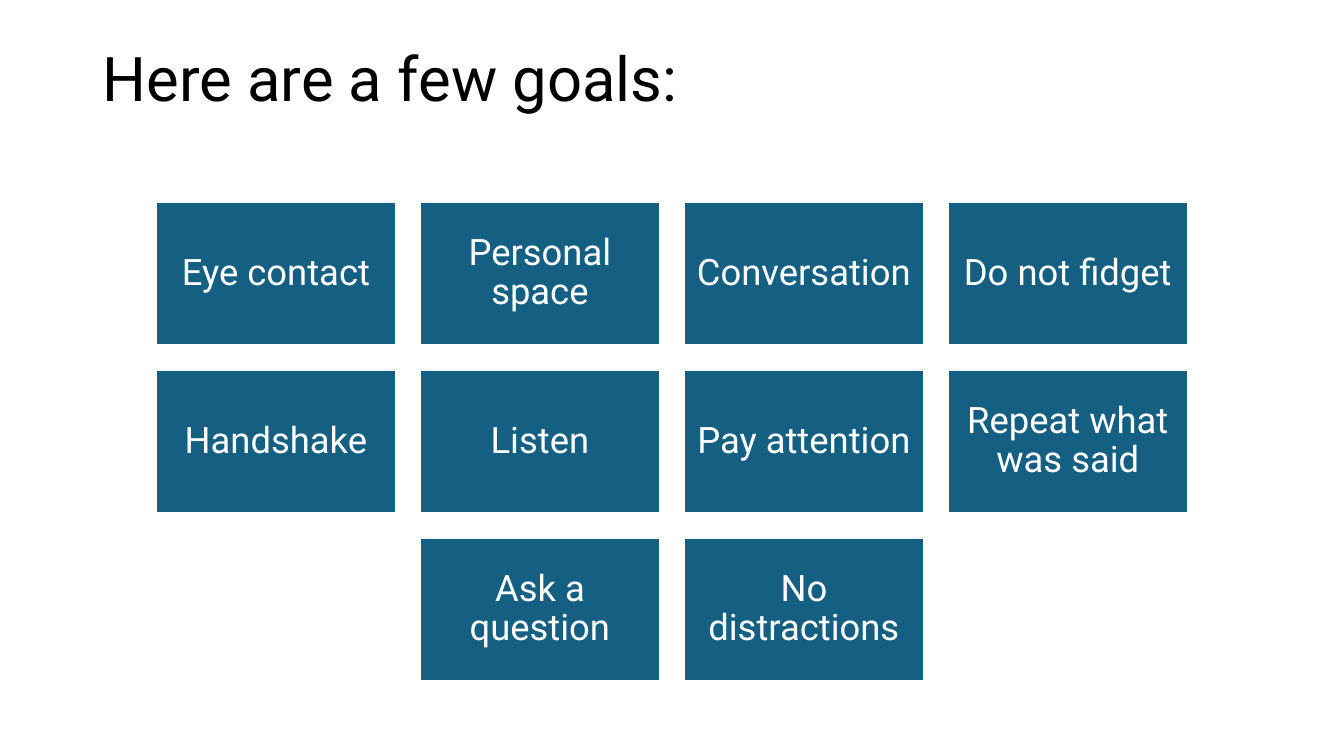
from dataclasses import dataclass

from pptx import Presentation
from pptx.dml.color import RGBColor
from pptx.enum.shapes import MSO_SHAPE
from pptx.enum.text import MSO_ANCHOR, PP_ALIGN
from pptx.util import Pt


@dataclass(frozen=True)
class Theme:
    font: str = "Roboto"
    title_size: int = 44
    goal_size: int = 26
    black: RGBColor = RGBColor(0x00, 0x00, 0x00)
    white: RGBColor = RGBColor(0xFF, 0xFF, 0xFF)
    teal: RGBColor = RGBColor(0x15, 0x60, 0x82)


theme = Theme()
SLIDE_W, SLIDE_H = 960, 540


def style_text(tf, size, color, align):
    tf.word_wrap = True
    for p in tf.paragraphs:
        p.alignment = align
        p.line_spacing = 0.9
        for r in p.runs:
            r.font.name = theme.font
            r.font.size = Pt(size)
            r.font.color.rgb = color


prs = Presentation()
prs.slide_width, prs.slide_height = Pt(SLIDE_W), Pt(SLIDE_H)
s = prs.slides.add_slide(prs.slide_layouts[5])

# Title
title = s.shapes.title
title.left, title.top, title.width, title.height = Pt(66), Pt(28.8), Pt(828), Pt(104.4)
tf = title.text_frame
tf.text = "Here are a few goals:"
tf.vertical_anchor = MSO_ANCHOR.TOP
tf.margin_top = Pt(6)
style_text(tf, theme.title_size, theme.black, PP_ALIGN.LEFT)

# Goal tiles, each row centred on the slide
goal_rows = [
    ["Eye contact", "Personal space", "Conversation", "Do not fidget"],
    ["Handshake", "Listen", "Pay attention", "Repeat what was said"],
    ["Ask a question", "No distractions"],
]
TILE_W = 171.4
TILE_H = TILE_W * 0.6
GAP = TILE_W * 0.1
GRID_TOP = 144

for row, goals in enumerate(goal_rows):
    row_w = len(goals) * (TILE_W + GAP) - GAP
    left = (SLIDE_W - row_w) / 2
    top = GRID_TOP + row * (TILE_H + GAP)
    for col, goal in enumerate(goals):
        sp = s.shapes.add_shape(
            MSO_SHAPE.RECTANGLE,
            Pt(left + col * (TILE_W + GAP)), Pt(top), Pt(TILE_W), Pt(TILE_H),
        )
        sp.shadow.inherit = False
        sp.fill.solid()
        sp.fill.fore_color.rgb = theme.teal
        sp.line.color.rgb = theme.white
        sp.line.width = Pt(1.5)
        tf = sp.text_frame
        tf.text = goal
        tf.vertical_anchor = MSO_ANCHOR.MIDDLE
        tf.margin_left = tf.margin_right = tf.margin_top = tf.margin_bottom = Pt(7.8)
        style_text(tf, theme.goal_size, theme.white, PP_ALIGN.CENTER)

prs.save("out.pptx")
